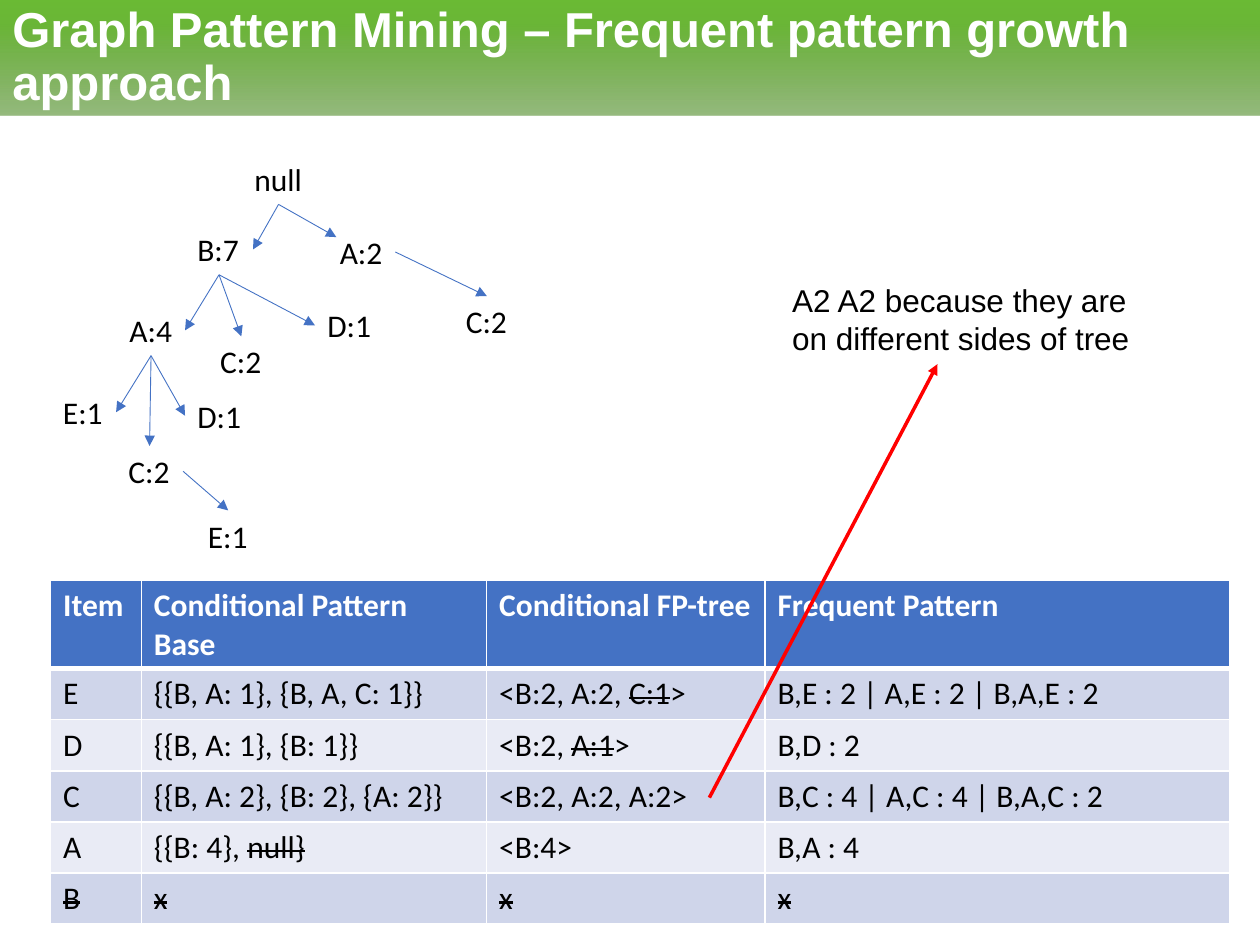
import pptx
import pptx.util
import pptx.dml.color
import pptx.enum.shapes
import pptx.enum.text
import pptx.oxml
import pptx.oxml.ns
import lxml.etree

Cm = pptx.util.Cm
Pt = pptx.util.Pt
RGBColor = pptx.dml.color.RGBColor

WHITE = RGBColor(0xFF, 0xFF, 0xFF)
BLACK = RGBColor(0, 0, 0)
BLUE = RGBColor(0x44, 0x72, 0xC4)
RED = RGBColor(0xFF, 0, 0)
BAND_DARK = RGBColor(0xCF, 0xD5, 0xEA)
BAND_LIGHT = RGBColor(0xE9, 0xEB, 0xF5)
GREEN_PALE = RGBColor(0x51, 0x8D, 0x2A)
GREEN_MID = RGBColor(0x6A, 0xB6, 0x36)
GREEN_TOP = RGBColor(0x6A, 0xBA, 0x34)

TITLE = "Graph Pattern Mining – Frequent pattern growth approach"
TITLE_STOPS = [(0, GREEN_PALE), (80, GREEN_MID), (100, GREEN_TOP)]
NOTE = "A2 A2 because they are on different sides of tree"

TITLE_FONT = {"name": "Arial", "size": Pt(28), "bold": True}
NOTE_FONT = {"name": "Arial", "size": Pt(18)}
BODY_FONT = {"name": "Calibri", "size": Pt(18)}
HEADER_FONT = {**BODY_FONT, "bold": True}

TOP, LEFT, BOTTOM, RIGHT = range(4)
NODE_HEIGHT = 1.02
NODES = {
    "root": ("null", 4.88, 3.1, 1.47),
    "b": ("B:7", 3.73, 4.52, 1.37),
    "a": ("A:2", 6.6, 4.57, 1.37),
    "a_c": ("C:2", 9.14, 5.97, 1.35),
    "b_a": ("A:4", 2.36, 6.15, 1.37),
    "b_c": ("C:2", 4.19, 6.78, 1.35),
    "b_d": ("D:1", 6.35, 6.05, 1.4),
    "ba_e": ("E:1", 1.02, 7.8, 1.32),
    "ba_c": ("C:2", 2.34, 8.99, 1.35),
    "ba_d": ("D:1", 3.73, 7.87, 1.4),
    "bac_e": ("E:1", 3.94, 10.29, 1.32),
}
EDGES = [
    ("root", BOTTOM, "b", RIGHT),
    ("b", BOTTOM, "b_a", RIGHT),
    ("b", BOTTOM, "b_c", TOP),
    ("b", BOTTOM, "b_d", LEFT),
    ("b_a", BOTTOM, "ba_e", RIGHT),
    ("b_a", BOTTOM, "ba_c", TOP),
    ("b_a", BOTTOM, "ba_d", LEFT),
    ("ba_c", RIGHT, "bac_e", TOP),
    ("a", RIGHT, "a_c", TOP),
]
ROOT_TO_A_END = (Cm(6.78), Cm(4.78))

STRIKE = "~"
COLUMN_WIDTHS = [1.83, 6.96, 5.61, 9.37]
ROW_HEIGHT = 1.03
ROWS = [
    ("Item", "Conditional Pattern Base", "Conditional FP-tree", "Frequent Pattern"),
    ("E", "{{B, A: 1}, {B, A, C: 1}}", "<B:2, A:2, ~C:1~>", "B,E : 2 | A,E : 2 | B,A,E : 2"),
    ("D", "{{B, A: 1}, {B: 1}}", "<B:2, ~A:1~>", "B,D : 2"),
    ("C", "{{B, A: 2}, {B: 2}, {A: 2}}", "<B:2, A:2, A:2>", "B,C : 4 | A,C : 4 | B,A,C : 2"),
    ("A", "{{B: 4}, ~null}~", "<B:4>", "B,A : 4"),
    ("~B~", "~x~", "~x~", "~x~"),
]


def add_text(frame, text, style, color):
    para = frame.paragraphs[0]
    for index, part in enumerate(text.split(STRIKE)):
        if not part:
            continue
        span = para.add_run()
        span.text = part
        for key, value in style.items():
            setattr(span.font, key, value)
        span.font.color.rgb = color
        if index % 2:
            span._r.get_or_add_rPr().set("strike", "sngStrike")
    return para


def add_arrow(shapes, start, end, color, width):
    arrow = shapes.add_connector(pptx.enum.shapes.MSO_CONNECTOR.STRAIGHT, *start, *end)
    arrow.line.color.rgb = color
    arrow.line.width = Pt(width)
    tag = pptx.oxml.ns.qn
    lxml.etree.SubElement(arrow.line._get_or_add_ln(), tag("a:tailEnd")).set("type", "triangle")
    lxml.etree.SubElement(arrow._element.spPr, tag("a:effectLst"))
    return arrow


def side_middle(box, side):
    across = {TOP: 0.5, LEFT: 0, BOTTOM: 0.5, RIGHT: 1}[side]
    down = {TOP: 0, LEFT: 0.5, BOTTOM: 1, RIGHT: 0.5}[side]
    return int(box.left + box.width * across), int(box.top + box.height * down)


def add_title(page, width):
    banner = page.shapes.add_shape(
        pptx.enum.shapes.MSO_SHAPE.RECTANGLE, 0, 0, width, Cm(2.34))
    banner.shadow.inherit = False
    banner.line.fill.background()
    stops = ""
    for position, color in TITLE_STOPS:
        alpha = '<a:alpha val="60000"/>' if position == 0 else ""
        stops += (f'<a:gs pos="{position * 1000}">'
                  f'<a:srgbClr val="{color}">{alpha}</a:srgbClr></a:gs>')
    gradient = pptx.oxml.parse_xml(
        f'<a:gradFill {pptx.oxml.ns.nsdecls("a")} rotWithShape="1">'
        f'<a:gsLst>{stops}</a:gsLst><a:lin ang="16200000" scaled="0"/></a:gradFill>')
    banner._element.spPr.find(pptx.oxml.ns.qn("a:prstGeom")).addnext(gradient)
    frame = banner.text_frame
    frame.word_wrap = True
    frame.vertical_anchor = pptx.enum.text.MSO_ANCHOR.MIDDLE
    para = add_text(frame, TITLE, TITLE_FONT, WHITE)
    para.alignment = pptx.enum.text.PP_ALIGN.LEFT
    para.line_spacing = 0.9


def add_tree(page):
    tree = page.shapes.add_group_shape().shapes
    boxes = {}
    for key, (label, left, top, width) in NODES.items():
        box = tree.add_textbox(Cm(left), Cm(top), Cm(width), Cm(NODE_HEIGHT))
        box.text_frame.word_wrap = False
        box.text_frame.auto_size = pptx.enum.text.MSO_AUTO_SIZE.SHAPE_TO_FIT_TEXT
        add_text(box.text_frame, label, BODY_FONT, BLACK)
        boxes[key] = box
    for parent, start, child, end in EDGES:
        arrow = add_arrow(tree, side_middle(boxes[parent], start),
                          side_middle(boxes[child], end), BLUE, 0.5)
        arrow.begin_connect(boxes[parent], start)
        arrow.end_connect(boxes[child], end)
    arrow = add_arrow(tree, side_middle(boxes["root"], BOTTOM), ROOT_TO_A_END, BLUE, 0.5)
    arrow.begin_connect(boxes["root"], BOTTOM)


def add_borders(cell, row_index):
    properties = cell._tc.get_or_add_tcPr()
    for side in "LRTB":
        heavy = (row_index, side) in ((0, "B"), (1, "T"))
        properties.append(pptx.oxml.parse_xml(
            f'<a:ln{side} {pptx.oxml.ns.nsdecls("a")} w="{Pt(3 if heavy else 1)}">'
            f'<a:solidFill><a:srgbClr val="{WHITE}"/></a:solidFill></a:ln{side}>'))


def add_patterns(page):
    table = page.shapes.add_table(
        len(ROWS), len(COLUMN_WIDTHS), Cm(1.02), Cm(11.7),
        Cm(sum(COLUMN_WIDTHS)), Cm(ROW_HEIGHT * len(ROWS))).table
    for column, width in zip(table.columns, COLUMN_WIDTHS):
        column.width = Cm(width)
    for row_index, texts in enumerate(ROWS):
        table.rows[row_index].height = Cm(ROW_HEIGHT)
        if row_index == 0:
            fill, style, color = BLUE, HEADER_FONT, WHITE
        else:
            fill = BAND_DARK if row_index % 2 else BAND_LIGHT
            style, color = {**BODY_FONT, "bold": False}, BLACK
        for column_index, text in enumerate(texts):
            cell = table.cell(row_index, column_index)
            add_borders(cell, row_index)
            cell.fill.solid()
            cell.fill.fore_color.rgb = fill
            add_text(cell.text_frame, text, style, color)


def add_note(page):
    add_arrow(page.shapes, (Cm(14.3), Cm(16.08)), (Cm(18.9), Cm(7.34)), RED, 2)
    box = page.shapes.add_textbox(Cm(15.72), Cm(5.54), Cm(7.92), Cm(1.8))
    box.text_frame.word_wrap = True
    box.text_frame.auto_size = pptx.enum.text.MSO_AUTO_SIZE.SHAPE_TO_FIT_TEXT
    add_text(box.text_frame, NOTE, NOTE_FONT, BLACK)


def main():
    deck = pptx.Presentation()
    deck.slide_width = Cm(25.4)
    deck.slide_height = Cm(19.05)
    page = deck.slides.add_slide(deck.slide_layouts[6])
    add_title(page, deck.slide_width)
    add_tree(page)
    add_patterns(page)
    add_note(page)
    deck.save("out.pptx")


if __name__ == "__main__":
    main()
